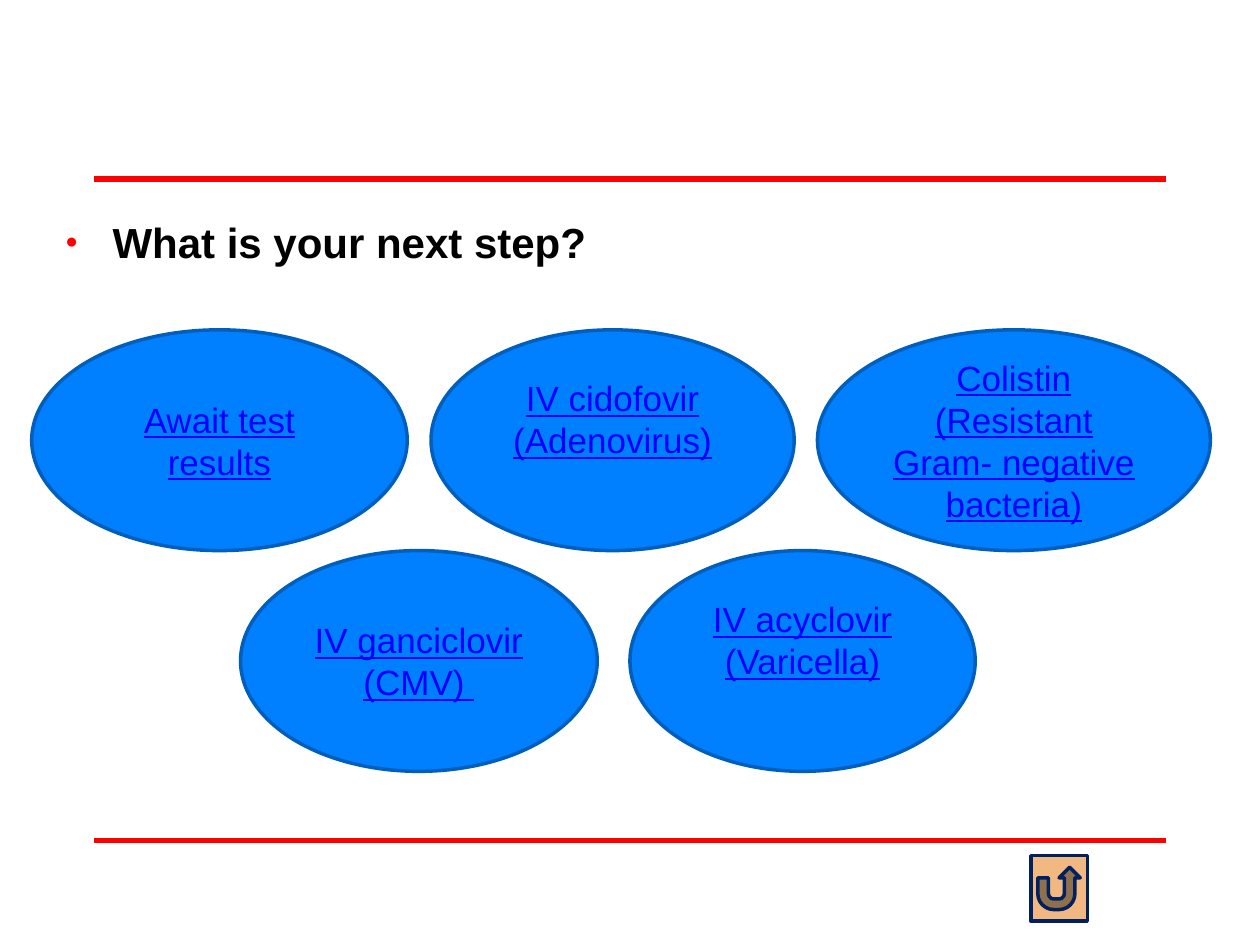
import pptx
import pptx.util
import pptx.dml.color
import pptx.enum.shapes
import pptx.enum.text
import pptx.oxml.ns
import lxml.etree

Cm = pptx.util.Cm
Pt = pptx.util.Pt
SHAPES = pptx.enum.shapes.MSO_SHAPE
ALIGN = pptx.enum.text.PP_ALIGN
ANCHOR = pptx.enum.text.MSO_ANCHOR

QUESTION = "What is your next step?"
RULE_TOPS = [3.61, 16.94]
ANSWER_HEIGHT = 4.45
ROW_TOPS = [6.65, 11.1]
RAISED = 0.98
CENTERED = 0.13
ANSWERS = [
    (0, 8.69, 7.32, ["IV cidofovir", "(Adenovirus)"], RAISED),
    (1, 4.85, 7.19, ["IV ganciclovir", "(CMV) "], CENTERED),
    (1, 12.7, 6.96, ["IV acyclovir", "(Varicella)"], RAISED),
    (0, 16.48, 7.92, ["Colistin", "(Resistant Gram- negative bacteria)"], CENTERED),
    (0, 0.64, 7.57, ["Await test results"], CENTERED),
]
QUESTION_FONT = {"name": "Arial", "size": Pt(24), "bold": True}
ANSWER_FONT = {"name": "Arial", "size": Pt(20), "underline": True}


def color(value):
    return pptx.dml.color.RGBColor.from_string(value)


def apply(target, values):
    for name, value in values.items():
        setattr(target, name, value)


def add_run(paragraph, text, font, font_color):
    run = paragraph.add_run()
    run.text = text
    apply(run.font, font)
    run.font.color.rgb = color(font_color)


def add_rule(slide, top):
    rule = slide.shapes.add_connector(
        pptx.enum.shapes.MSO_CONNECTOR.STRAIGHT, Cm(1.9), Cm(top), Cm(23.5), Cm(top))
    rule.line.color.rgb = color("FF0000")
    rule.line.width = Pt(3)
    lxml.etree.SubElement(rule._element.spPr, pptx.oxml.ns.qn("a:effectLst"))


def add_question(slide):
    box = slide.shapes.add_textbox(Cm(1.07), Cm(4.24), Cm(22.86), Cm(12.57))
    box.text_frame.word_wrap = True
    paragraph = box.text_frame.paragraphs[0]
    paragraph.space_before = Pt(4.8)
    add_run(paragraph, QUESTION, QUESTION_FONT, "000000")
    properties = paragraph._p.get_or_add_pPr()
    properties.set("marL", str(Cm(0.95)))
    properties.set("indent", str(Cm(-0.95)))
    bullet_color = lxml.etree.SubElement(properties, pptx.oxml.ns.qn("a:buClr"))
    for parent, tag, name, value in [
        (bullet_color, "a:srgbClr", "val", "FF0000"),
        (properties, "a:buSzPct", "val", "50000"),
        (properties, "a:buFont", "typeface", "Arial"),
        (properties, "a:buChar", "char", "●"),
    ]:
        lxml.etree.SubElement(parent, pptx.oxml.ns.qn(tag)).set(name, value)


def add_filled_shape(slide, kind, left, top, width, height, fill, line):
    shape = slide.shapes.add_shape(kind, Cm(left), Cm(top), Cm(width), Cm(height))
    shape.shadow.inherit = False
    shape.fill.solid()
    shape.fill.fore_color.rgb = color(fill)
    shape.line.color.rgb = color(line)
    shape.line.width = Pt(2)
    return shape


def add_answer(slide, row, left, width, lines, bottom_margin):
    ellipse = add_filled_shape(
        slide, SHAPES.OVAL, left, ROW_TOPS[row], width, ANSWER_HEIGHT, "0080FF", "005FBD")
    frame = ellipse.text_frame
    apply(frame, {"word_wrap": True, "vertical_anchor": ANCHOR.MIDDLE,
                  "margin_bottom": Cm(bottom_margin)})
    for index, text in enumerate(lines):
        paragraph = frame.add_paragraph() if index else frame.paragraphs[0]
        paragraph.alignment = ALIGN.CENTER
        add_run(paragraph, text, ANSWER_FONT, "0000FF")


def main():
    presentation = pptx.Presentation()
    apply(presentation, {"slide_width": Cm(25.4), "slide_height": Cm(19.05)})
    slide = presentation.slides.add_slide(presentation.slide_layouts[6])
    for top in RULE_TOPS:
        add_rule(slide, top)
    add_question(slide)
    for answer in ANSWERS:
        add_answer(slide, *answer)
    add_filled_shape(slide, SHAPES.ACTION_BUTTON_RETURN,
                     20.78, 17.25, 1.14, 1.32, "F1B981", "002060")
    presentation.save("out.pptx")


if __name__ == "__main__":
    main()
